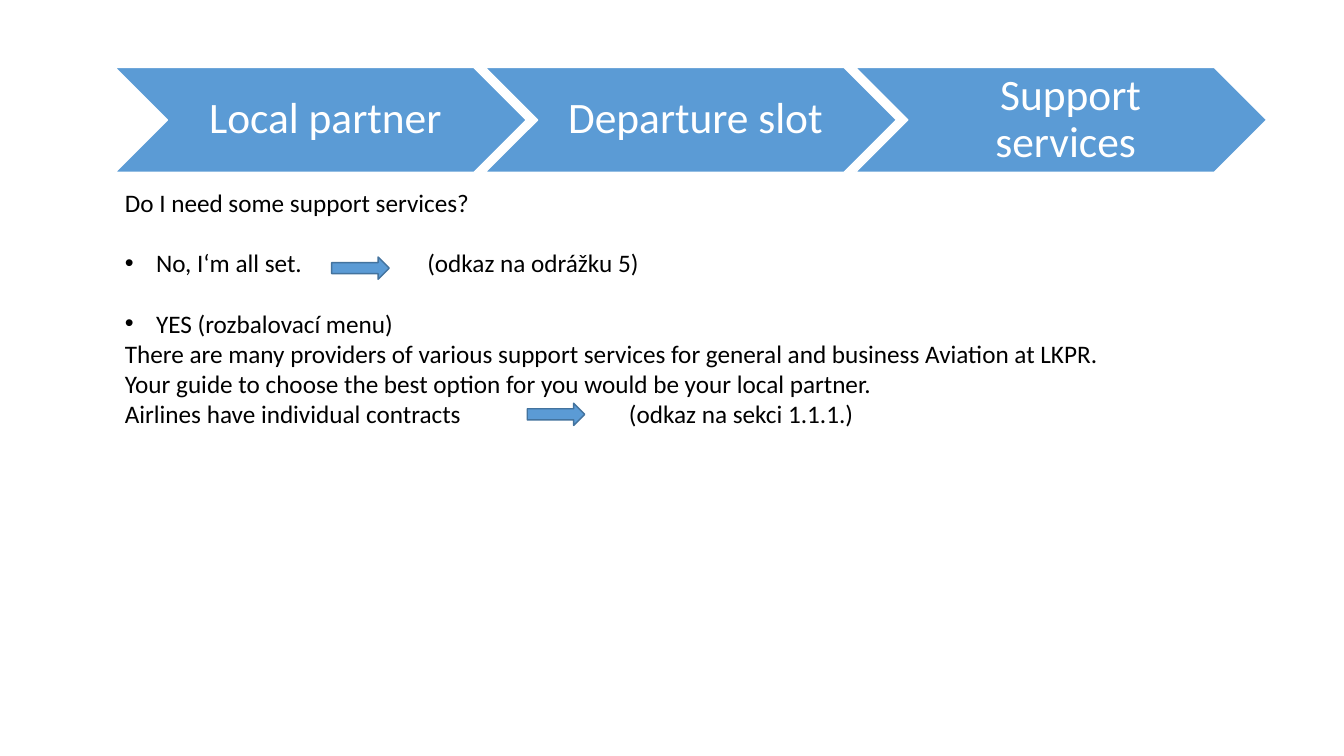
"""Build a slide with a three-step chevron bar and notes on support services."""
from dataclasses import dataclass

from lxml.etree import SubElement
from pptx import Presentation
from pptx.dml.color import RGBColor
from pptx.enum.shapes import MSO_SHAPE
from pptx.enum.text import MSO_ANCHOR, PP_ALIGN
from pptx.oxml.ns import qn
from pptx.util import Inches, Pt


@dataclass(frozen=True)
class Theme:
    """Colours, font and type sizes of the slide."""
    font: str = "Calibri"
    step_size: int = 31
    body_size: int = 18
    blue: str = "5B9BD5"
    dark_blue: str = "43739E"
    white: str = "FFFFFF"
    black: str = "000000"


def write(para, text, font, size, color, align=PP_ALIGN.LEFT, spacing=1.0, before=0,
          bullet=False, tab=None):
    """Fill a paragraph with one formatted span."""
    para.alignment = align
    para.line_spacing = spacing
    para.space_before = Pt(before)
    properties = para._p.get_or_add_pPr()
    if bullet:
        properties.set("marL", str(Inches(0.31)))
        properties.set("indent", str(-Inches(0.31)))
        SubElement(properties, qn("a:buFont")).set("typeface", "Arial")
        SubElement(properties, qn("a:buChar")).set("char", "•")
    if tab:
        stop = SubElement(SubElement(properties, qn("a:tabLst")), qn("a:tab"))
        stop.set("pos", str(Inches(tab)))
        stop.set("algn", "l")
    span = para.add_run()
    span.text = text
    span.font.name = font
    span.font.size = Pt(size)
    span.font.color.rgb = RGBColor.from_string(color)


class Painter:
    """Draws styled elements on the current page."""

    def __init__(self, page, theme):
        self.page = page
        self.theme = theme

    def shape(self, kind, left, top, width, height, line):
        """Add a blue preset shape with a thin outline."""
        shape = self.page.shapes.add_shape(
            kind, Inches(left), Inches(top), Inches(width), Inches(height))
        shape.shadow.inherit = False
        shape.fill.solid()
        shape.fill.fore_color.rgb = RGBColor.from_string(self.theme.blue)
        shape.line.color.rgb = RGBColor.from_string(line)
        shape.line.width = Pt(1)
        return shape

    def step(self, text, left, top, width, height):
        """Add a labelled chevron."""
        theme = self.theme
        chevron = self.shape(MSO_SHAPE.CHEVRON, left, top, width, height, theme.white)
        frame = chevron.text_frame
        frame.word_wrap = True
        frame.vertical_anchor = MSO_ANCHOR.MIDDLE
        frame.margin_left = Inches(0.14)
        frame.margin_right = frame.margin_top = frame.margin_bottom = Inches(0.05)
        write(frame.paragraphs[0], text, theme.font, theme.step_size, theme.white,
              align=PP_ALIGN.CENTER, spacing=0.9)

    def arrow(self, left, top):
        """Add a small arrow pointing right."""
        self.shape(MSO_SHAPE.RIGHT_ARROW, left, top, 0.57, 0.22, self.theme.dark_blue)

    def body(self, lines, left, top, width, height):
        """Add a text box with one paragraph for each line."""
        theme = self.theme
        box = self.page.shapes.add_textbox(
            Inches(left), Inches(top), Inches(width), Inches(height))
        frame = box.text_frame
        frame.word_wrap = True
        for index, (text, form) in enumerate(lines):
            para = frame.add_paragraph() if index else frame.paragraphs[0]
            write(para, text, theme.font, theme.body_size, theme.black, **form)


def main():
    """Build and save the deck."""
    deck = Presentation()
    deck.slide_width, deck.slide_height = Inches(13.33), Inches(7.5)
    painter = Painter(deck.slides.add_slide(deck.slide_layouts[6]), Theme())

    left, step_width = 1.14, 4.08
    for index, label in enumerate(("Local partner", "Departure slot", " Support services")):
        painter.step(label, left + index * step_width * 0.9, 0.67, step_width, 1.04)

    option = {"before": 21.5, "bullet": True}
    painter.body([
        ("Do I need some support services?", {}),
        ("No, I‘m all set. \t(odkaz na odrážku 5)", {**option, "tab": 3}),
        ("YES (rozbalovací menu)", option),
        ("There are many providers of various support services for general "
         "and business Aviation at LKPR.", {}),
        ("Your guide to choose the best option for you would be your local partner.", {}),
        ("Airlines have individual contracts \t(odkaz na sekci 1.1.1.)", {"tab": 5}),
    ], left, 1.81, 10.03, 2.52)

    painter.arrow(3.29, 2.55)
    painter.arrow(5.23, 4)
    deck.save("out.pptx")


if __name__ == "__main__":
    main()
